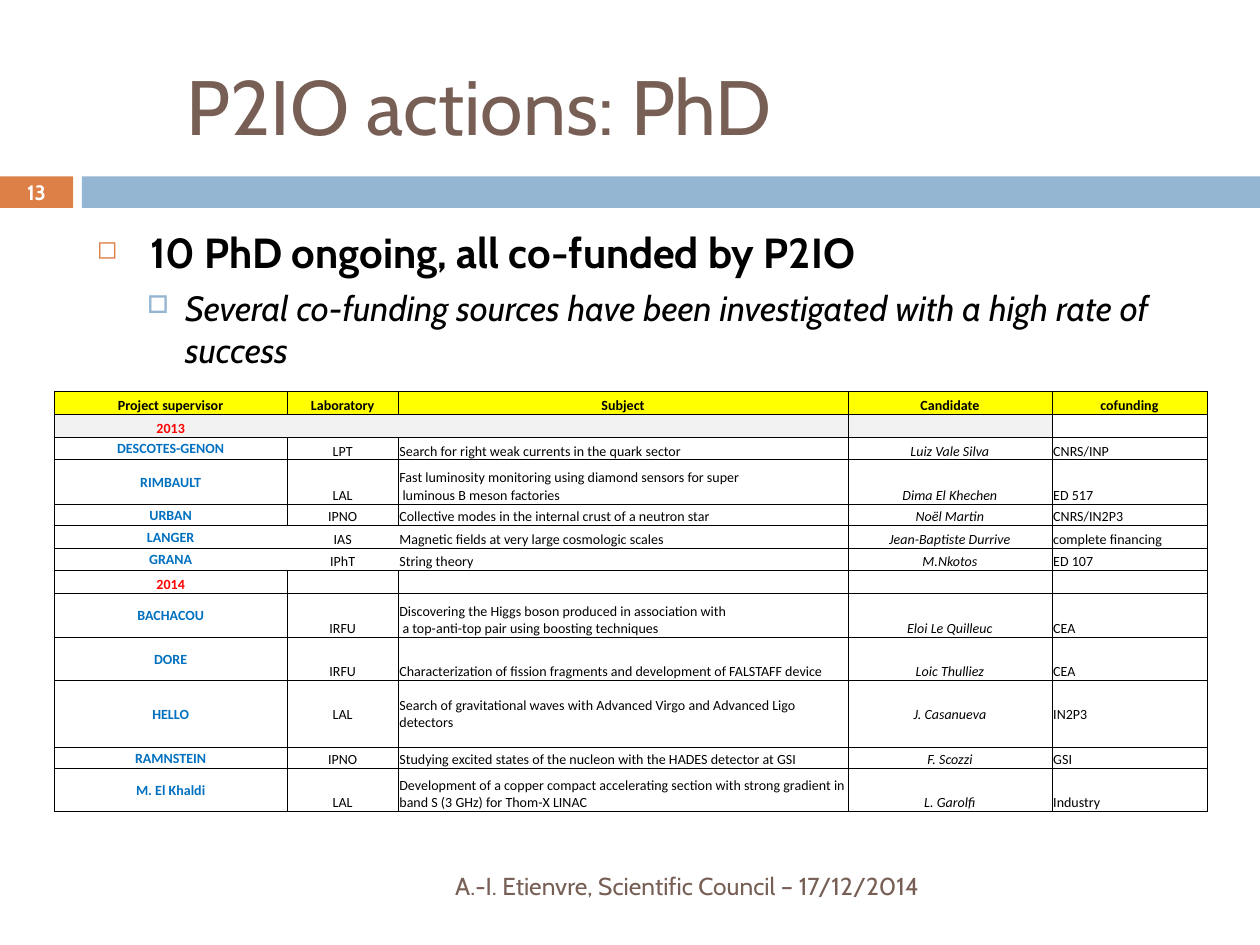
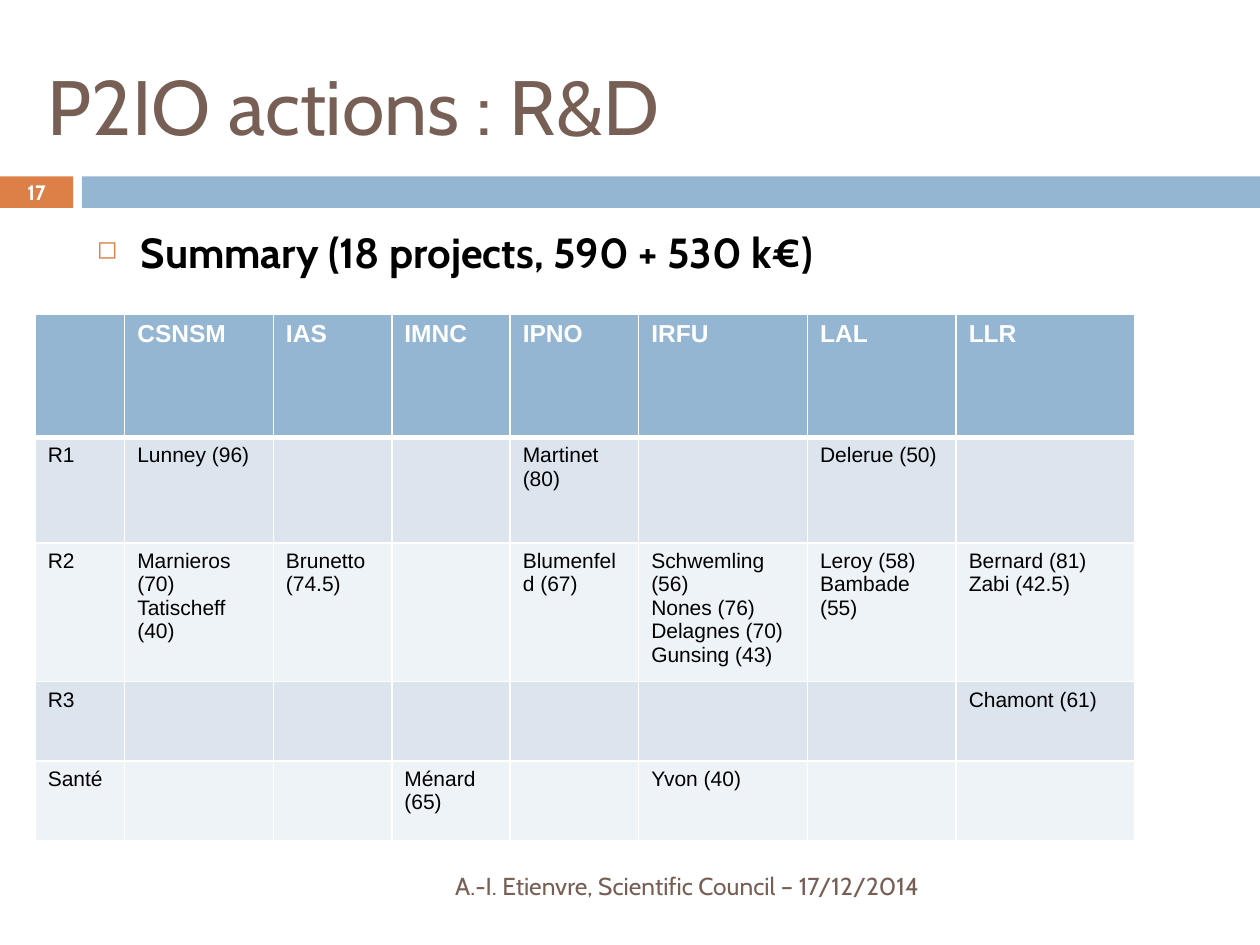
from dataclasses import dataclass
from typing import NamedTuple, Optional

from lxml import etree
from pptx import Presentation
from pptx import slide as s
from pptx import table as t
from pptx import util as u
from pptx.dml import color
from pptx.enum import shapes, text
from pptx.oxml import ns

# The slide is a grid of 100 columns by 75 rows of square units
UNIT = u.Inches(0.1)
COLUMNS, ROWS = 100, 75
LEFT, CENTER, RIGHT = text.PP_ALIGN.LEFT, text.PP_ALIGN.CENTER, text.PP_ALIGN.RIGHT
TOP, MIDDLE, BOTTOM = (text.MSO_ANCHOR.TOP, text.MSO_ANCHOR.MIDDLE,
                       text.MSO_ANCHOR.BOTTOM)


@dataclass(frozen=True)
class Theme:
    brown: str = "775F55"
    orange: str = "DD8047"
    blue: str = "94B6D2"
    black: str = "000000"
    white: str = "FFFFFF"
    yellow: str = "FFFF00"
    red: str = "FF0000"
    name_blue: str = "0070C0"
    year_grey: str = "F2F2F2"
    bands: tuple[str, str] = ("DCE5EE", "EEF3F7")
    main_font: str = "Cabin"
    thesis_font: str = "Calibri"
    project_font: str = "Arial"
    title_size: float = 44
    point_size: float = 24
    detail_size: float = 20
    footer_size: float = 14
    number_size: float = 11.9
    thesis_size: float = 8
    lab_size: float = 14
    project_size: float = 12


THEME = Theme()


class Area(NamedTuple):
    left: float
    top: float
    width: float
    height: float

    def lengths(self) -> list[int]:
        return [grid(value) for value in self]


class Style(NamedTuple):
    size: float
    color: str = THEME.black
    font: str = THEME.main_font
    bold: bool = False
    italic: bool = False


class Bullet(NamedTuple):
    sign: str
    color: str
    percent: int
    indent: float
    hanging: float


class Point(NamedTuple):
    words: str
    style: Style
    bullet: Bullet
    space_before: float = 0


class Edges(NamedTuple):
    """Border widths in points; zero draws no line."""
    left: float
    right: float
    top: float
    bottom: float


class Look(NamedTuple):
    style: Style
    edges: Edges
    line: str
    fill: Optional[str] = None
    align: text.PP_ALIGN = LEFT
    anchor: text.MSO_ANCHOR = TOP
    tight: bool = False


class Thesis(NamedTuple):
    supervisor: str
    laboratory: str = ""
    subject: str = ""
    candidate: str = ""
    cofunding: str = ""
    height: float = 1.8
    open_sides: bool = False
    fill: Optional[str] = None
    anchor: text.MSO_ANCHOR = BOTTOM


TITLE = Style(THEME.title_size, THEME.brown)
FOOTER = Style(THEME.footer_size, THEME.brown)
NUMBER = Style(THEME.number_size, THEME.white, bold=True)
POINT = Style(THEME.point_size, bold=True)
DETAIL = Style(THEME.detail_size, italic=True)
THESIS = Style(THEME.thesis_size, font=THEME.thesis_font)
PROJECT = Style(THEME.project_size, font=THEME.project_font)
LAB = Style(THEME.lab_size, THEME.white, THEME.project_font, bold=True)
MAIN_BULLET = Bullet("◻", THEME.orange, 60, 3.5, 3.5)
SUB_BULLET = Bullet("□", THEME.blue, 70, 7, 3)

BANDS = [(Area(0, 14, 5.8, 2.5), THEME.orange), (Area(6.5, 14, 93.5, 2.5), THEME.blue)]

# PhD table
THESIS_COLUMNS = [18.5, 8.8, 35.7, 16.2, 12.3]
THESIS_HEADS = Thesis("Project supervisor", "Laboratory", "Subject", "Candidate",
                      "cofunding")
THESES = [
    Thesis("2013", open_sides=True, fill=THEME.year_grey),
    Thesis("DESCOTES-GENON", "LPT", "Search for right weak currents in the quark sector",
           "Luiz Vale Silva", "CNRS/INP"),
    Thesis("RIMBAULT", "LAL", "Fast luminosity monitoring using diamond sensors for super\n"
           " luminous B meson factories", "Dima El Khechen", "ED 517", 3.5),
    Thesis("URBAN", "IPNO", "Collective modes in the internal crust of a neutron star",
           "Noël Martin", "CNRS/IN2P3", 1.7),
    Thesis("LANGER", "IAS", "Magnetic fields at very large cosmologic scales",
           "Jean-Baptiste Durrive", "complete financing", open_sides=True),
    Thesis("GRANA", "IPhT", "String theory", "M.Nkotos", "ED 107", open_sides=True),
    Thesis("2014"),
    Thesis("BACHACOU", "IRFU", "Discovering the Higgs boson produced in association with\n"
           " a top-anti-top pair using boosting techniques", "Eloi Le Quilleuc", "CEA", 3.5),
    Thesis("DORE", "IRFU",
           "Characterization of fission fragments and development of FALSTAFF device",
           "Loic Thulliez", "CEA", 3.4),
    Thesis("HELLO", "LAL",
           "Search of gravitational waves with Advanced Virgo and Advanced Ligo detectors",
           "J. Casanueva", "IN2P3", 5.3, anchor=MIDDLE),
    Thesis("RAMNSTEIN", "IPNO",
           "Studying excited states of the nucleon with the HADES detector at GSI",
           "F. Scozzi", "GSI", 1.7),
    Thesis("M. El Khaldi", "LAL", "Development of a copper compact accelerating section with "
           "strong gradient in band S (3 GHz) for Thom-X LINAC", "L. Garolfi", "Industry", 3.4),
]

# R&D table: projects by theme and laboratory
LABS = ["CSNSM", "IAS", "IMNC", "IPNO", "IRFU", "LAL", "LLR"]
PROJECT_COLUMNS = [7.1, 11.8, 9.4, 9.4, 10.2, 13.4, 11.8, 14.2]
PROJECT_ROWS = [9.8, 8.4, 6.3, 6.3, 6.3]
PROJECTS = {
    "R1": {"CSNSM": "Lunney (96)", "IPNO": "Martinet (80)", "LAL": "Delerue (50)"},
    "R2": {"CSNSM": "Marnieros (70)|Tatischeff (40)", "IAS": "Brunetto (74.5)",
           "IPNO": "Blumenfeld (67)",
           "IRFU": "Schwemling (56)|Nones (76)|Delagnes (70)|Gunsing (43)",
           "LAL": "Leroy (58)|Bambade (55)", "LLR": "Bernard (81)|Zabi (42.5)"},
    "R3": {"LLR": "Chamont (61)"},
    "Santé": {"IMNC": "Ménard (65)", "IRFU": "Yvon (40)"},
}


def grid(units: float) -> int:
    return round(units * UNIT)


def rgb(value: str) -> color.RGBColor:
    return color.RGBColor.from_string(value)


# Text
def add_words(para, words: str, style: Style) -> None:
    for index, line in enumerate(words.split("\n")):
        if index:
            para.add_line_break()
        span = para.add_run()
        span.text = line
        span.font.name, span.font.size = style.font, u.Pt(style.size)
        span.font.bold, span.font.italic = style.bold, style.italic
        span.font.color.rgb = rgb(style.color)


def add_bullet(para, bullet: Bullet) -> None:
    props = para._p.get_or_add_pPr()
    props.set("marL", str(grid(bullet.indent)))
    props.set("indent", str(-grid(bullet.hanging)))
    tint = etree.SubElement(props, ns.qn("a:buClr"))
    etree.SubElement(tint, ns.qn("a:srgbClr"), val=bullet.color)
    etree.SubElement(props, ns.qn("a:buSzPct"), val=str(bullet.percent * 1000))
    etree.SubElement(props, ns.qn("a:buChar"), char=bullet.sign)


def add_frame(page: s.Slide, area: Area, anchor: text.MSO_ANCHOR):
    frame = page.shapes.add_textbox(*area.lengths()).text_frame
    frame.word_wrap, frame.vertical_anchor = True, anchor
    return frame


def add_label(page: s.Slide, area: Area, words: str, style: Style,
              align: text.PP_ALIGN = LEFT) -> None:
    para = add_frame(page, area, MIDDLE).paragraphs[0]
    para.alignment = align
    add_words(para, words, style)


def add_points(page: s.Slide, points: list[Point]) -> None:
    frame = add_frame(page, Area(6.7, 17.5, 89.2, 49.2), TOP)
    for index, point in enumerate(points):
        para = frame.add_paragraph() if index else frame.paragraphs[0]
        add_bullet(para, point.bullet)
        if index:
            para.space_before = u.Pt(point.space_before)
        add_words(para, point.words, point.style)


# Tables
def add_grid(page: s.Slide, left: float, top: float, widths: list[float],
             heights: list[float]) -> t.Table:
    area = Area(left, top, sum(widths), sum(heights))
    table = page.shapes.add_table(len(heights), len(widths), *area.lengths()).table
    table.first_row = table.horz_banding = False
    for column, width in zip(table.columns, widths):
        column.width = grid(width)
    for row, height in zip(table.rows, heights):
        row.height = grid(height)
    return table


def draw_edges(cell: t._Cell, edges: Edges, line_color: str) -> None:
    props = cell._tc.get_or_add_tcPr()
    for index, (side, width) in enumerate(zip("LRTB", edges)):
        line = etree.Element(ns.qn(f"a:ln{side}"), w=str(u.Pt(width)))
        if width:
            solid = etree.SubElement(line, ns.qn("a:solidFill"))
            etree.SubElement(solid, ns.qn("a:srgbClr"), val=line_color)
        else:
            etree.SubElement(line, ns.qn("a:noFill"))
        props.insert(index, line)


def fill_cell(cell: t._Cell, words: str, look: Look) -> None:
    if look.fill:
        cell.fill.solid()
        cell.fill.fore_color.rgb = rgb(look.fill)
    else:
        cell.fill.background()
    draw_edges(cell, look.edges, look.line)
    cell.vertical_anchor = look.anchor
    if look.tight:
        cell.margin_left = cell.margin_right = cell.margin_top = grid(0.1)
        cell.margin_bottom = 0
    for index, line in enumerate(words.split("|")):
        para = cell.text_frame.add_paragraph() if index else cell.text_frame.paragraphs[0]
        para.alignment = look.align
        if line:
            add_words(para, line, look.style)
        else:  # keeps an empty row as low as its text size allows
            etree.SubElement(para._p, ns.qn("a:endParaRPr"), sz=str(look.style.size * 100))


def thesis_look(thesis: Thesis, column: int) -> Look:
    style, fill, anchor, align = THESIS, thesis.fill, thesis.anchor, CENTER
    is_year = not thesis.subject
    if thesis is THESIS_HEADS:
        style = style._replace(bold=True)
    elif column == 0:
        style = style._replace(bold=True, color=THEME.red if is_year else THEME.name_blue)
        anchor = BOTTOM if is_year else MIDDLE
    elif column in (2, 4):
        align = LEFT
    elif column == 3:
        style = style._replace(italic=True)
    if column == 4 and is_year:
        fill = None
    left = 0 if thesis.open_sides and column in (1, 2) else 0.5
    right = 0 if thesis.open_sides and column in (0, 1) else 0.5
    return Look(style, Edges(left, right, 0.5, 0.5), THEME.black, fill, align, anchor, True)


def add_thesis_table(page: s.Slide) -> None:
    rows = [THESIS_HEADS, *THESES]
    table = add_grid(page, 4.3, 31.1, THESIS_COLUMNS, [row.height for row in rows])
    for index, thesis in enumerate(rows):
        for column, words in enumerate(thesis[:5]):
            look = thesis_look(thesis, column)
            if index == 0:
                look = look._replace(fill=THEME.yellow)
            fill_cell(table.cell(index, column), words, look)


def add_project_table(page: s.Slide) -> None:
    table = add_grid(page, 2.8, 24.9, PROJECT_COLUMNS, PROJECT_ROWS)
    head = Look(LAB, Edges(1, 1, 1, 3), THEME.white, THEME.blue)
    for column, lab in enumerate(["", *LABS]):
        fill_cell(table.cell(0, column), lab, head)
    for row, (theme, projects) in enumerate(PROJECTS.items(), start=1):
        edges = Edges(1, 1, 3 if row == 1 else 1, 1)
        look = Look(PROJECT, edges, THEME.white, THEME.bands[(row - 1) % 2])
        for column, words in enumerate([theme, *(projects.get(lab, "") for lab in LABS)]):
            fill_cell(table.cell(row, column), words, look)


# Shared page: bands, number, title and footer
def add_page(deck, number: int, title: str, title_left: float) -> s.Slide:
    page = deck.slides.add_slide(deck.slide_layouts[6])
    for area, fill in BANDS:
        band = page.shapes.add_shape(shapes.MSO_SHAPE.RECTANGLE, *area.lengths())
        band.shadow.inherit = False
        band.fill.solid()
        band.fill.fore_color.rgb = rgb(fill)
        band.line.fill.background()
    add_label(page, Area(15.1, 68.3, 59.3, 4),
              "A.-I. Etienvre, Scientific Council – 17/12/2014 ", FOOTER, RIGHT)
    add_label(page, Area(0, 13.9, 5.8, 2.7), str(number), NUMBER, CENTER)
    add_label(page, Area(title_left, 2.9, 87.8, 10.8), title, TITLE)
    return page


def main() -> None:
    deck = Presentation()
    deck.slide_width, deck.slide_height = grid(COLUMNS), grid(ROWS)

    page = add_page(deck, 13, "P2IO actions: PhD", 13.8)
    add_points(page, [
        Point(" 10 PhD ongoing, all co-funded by P2IO", POINT, MAIN_BULLET),
        Point("Several co-funding sources have been investigated with a high rate of success",
              DETAIL, SUB_BULLET, 5.5)])
    add_thesis_table(page)

    page = add_page(deck, 17, "P2IO actions : R&D", 2.8)
    add_points(page, [Point("Summary (18 projects, 590 + 530 k€)", POINT, MAIN_BULLET)])
    add_project_table(page)

    deck.save("out.pptx")


if __name__ == "__main__":
    main()
